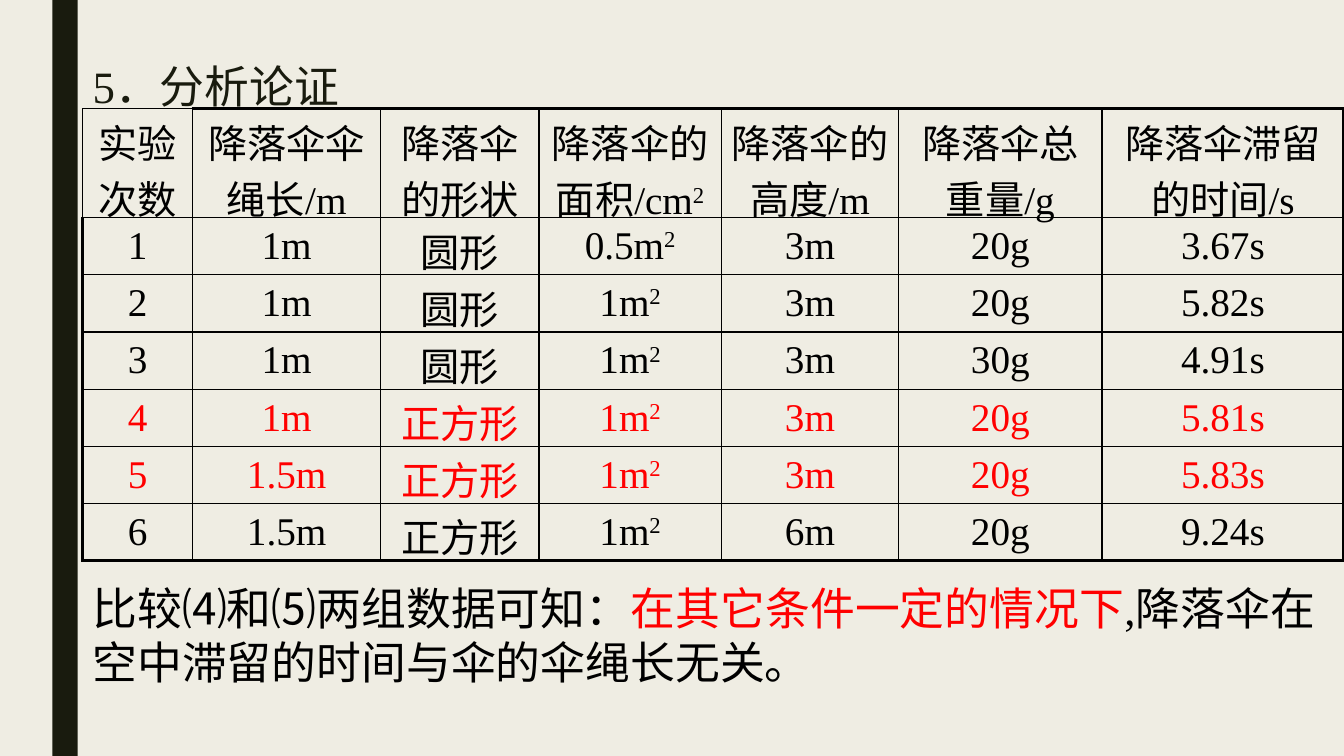
from dataclasses import dataclass

from lxml import etree
from pptx import Presentation
from pptx.dml.color import RGBColor
from pptx.enum.lang import MSO_LANGUAGE_ID
from pptx.enum.shapes import MSO_SHAPE
from pptx.enum.text import MSO_ANCHOR, MSO_AUTO_SIZE, PP_ALIGN
from pptx.oxml.ns import qn
from pptx.util import Inches, Pt

RECTANGLE = MSO_SHAPE.RECTANGLE
TOP, MIDDLE = MSO_ANCHOR.TOP, MSO_ANCHOR.MIDDLE
LEFT, CENTER = PP_ALIGN.LEFT, PP_ALIGN.CENTER
NO_AUTOFIT = MSO_AUTO_SIZE.NONE
CHINESE = MSO_LANGUAGE_ID.SIMPLIFIED_CHINESE


@dataclass(frozen=True)
class Theme:
    background: str = "EFEDE3"
    dark: str = "191B0E"
    text: str = "000000"
    highlight: str = "FF0000"
    font: str = "Times New Roman"
    large: int = 32
    table: int = 28
    thin: float = 1
    thick: float = 2.25


THEME = Theme()
SLIDE_WIDTH, SLIDE_HEIGHT = Inches(13.33), Inches(7.5)
CONTENT_LEFT = 6.15
CONTENT_WIDTH = 100 - CONTENT_LEFT
HEADER_HEIGHT, ROW_HEIGHT = 14.4, 7.56
COLUMN_WEIGHTS = (1.09, 1.87, 1.57, 1.81, 1.76, 2.02, 2.4)

EXPERIMENTS = (
    ("实验次数", "降落伞伞绳长/m", "降落伞的形状", "降落伞的面积/cm²",
     "降落伞的高度/m", "降落伞总重量/g", "降落伞滞留的时间/s"),
    ("1", "1m", "圆形", "0.5m²", "3m", "20g", "3.67s"),
    ("2", "1m", "圆形", "1m²", "3m", "20g", "5.82s"),
    ("3", "1m", "圆形", "1m²", "3m", "30g", "4.91s"),
    ("4", "1m", "正方形", "1m²", "3m", "20g", "5.81s"),
    ("5", "1.5m", "正方形", "1m²", "3m", "20g", "5.83s"),
    ("6", "1.5m", "正方形", "1m²", "6m", "20g", "9.24s"),
)
COMPARED_ROWS = (4, 5)


def across(percent):
    return round(SLIDE_WIDTH * percent / 100)


def down(percent):
    return round(SLIDE_HEIGHT * percent / 100)


def area(left, top, width, height):
    return across(left), down(top), across(width), down(height)


def add_text(paragraph, text, *, size=THEME.large, color=THEME.text,
             align=LEFT, superscript=False):
    paragraph.alignment = align
    run = paragraph.add_run()
    run.text = text
    font = run.font
    font.name, font.size = THEME.font, Pt(size)
    font.color.rgb = RGBColor.from_string(color)
    font.language_id = CHINESE
    if superscript:
        run._r.get_or_add_rPr().set("baseline", "30000")


def add_bar(slide):
    bar = slide.shapes.add_shape(RECTANGLE, *area(3.9, 0, 1.88, 100))
    bar.shadow.inherit = False
    bar.fill.solid()
    bar.fill.fore_color.rgb = RGBColor.from_string(THEME.dark)
    bar.line.fill.background()


def format_title(slide, text):
    title = slide.shapes.title
    title.left, title.top, title.width, title.height = area(
        CONTENT_LEFT, 0, 21.6, HEADER_HEIGHT)
    frame = title.text_frame
    frame.auto_size = NO_AUTOFIT
    frame.vertical_anchor = TOP
    frame.paragraphs[0].line_spacing = 2.0
    add_text(frame.paragraphs[0], text, color=THEME.dark)


def set_border(cell, side, width):
    border = etree.SubElement(cell._tc.get_or_add_tcPr(), qn(f"a:{side}"),
                              w=str(Pt(width)))
    fill = etree.SubElement(border, qn("a:solidFill"))
    etree.SubElement(fill, qn("a:srgbClr"), val=THEME.text)


def format_cell(cell, text, color, outer_sides):
    cell.vertical_anchor = MIDDLE
    cell.margin_left = cell.margin_right = Inches(0.1)
    cell.margin_top = cell.margin_bottom = Inches(0.04)
    for side in ("lnL", "lnR", "lnT", "lnB"):
        set_border(cell, side, THEME.thick if side in outer_sides else THEME.thin)
    cell.fill.background()
    style = {"size": THEME.table, "color": color, "align": CENTER}
    paragraph = cell.text_frame.paragraphs[0]
    add_text(paragraph, text.removesuffix("²"), **style)
    if text.endswith("²"):
        add_text(paragraph, "2", superscript=True, **style)


def add_experiment_table(slide):
    last_row, last_column = len(EXPERIMENTS) - 1, len(COLUMN_WEIGHTS) - 1
    table = slide.shapes.add_table(
        last_row + 1, last_column + 1,
        *area(CONTENT_LEFT, HEADER_HEIGHT, CONTENT_WIDTH,
              HEADER_HEIGHT + last_row * ROW_HEIGHT)).table
    table.first_row = table.horz_banding = False
    for column, weight in zip(table.columns, COLUMN_WEIGHTS):
        column.width = across(CONTENT_WIDTH * weight / sum(COLUMN_WEIGHTS))
    for row_index, values in enumerate(EXPERIMENTS):
        table.rows[row_index].height = down(ROW_HEIGHT if row_index else HEADER_HEIGHT)
        color = THEME.highlight if row_index in COMPARED_ROWS else THEME.text
        for column_index, text in enumerate(values):
            edges = {
                "lnL": column_index == 0 and row_index > 0,
                "lnR": column_index == last_column,
                "lnT": row_index == 0 and column_index > 0,
                "lnB": row_index == last_row,
            }
            outer_sides = [side for side, outer in edges.items() if outer]
            format_cell(table.cell(row_index, column_index), text, color, outer_sides)


def add_conclusion(slide):
    box = slide.shapes.add_textbox(*area(CONTENT_LEFT, 76.13, CONTENT_WIDTH, 15.73))
    box.text_frame.word_wrap = True
    paragraph = box.text_frame.paragraphs[0]
    add_text(paragraph, "比较⑷和⑸两组数据可知：")
    add_text(paragraph, "在其它条件一定的情况下", color=THEME.highlight)
    add_text(paragraph, ",降落伞在空中滞留的时间与伞的伞绳长无关。")


def main():
    presentation = Presentation()
    presentation.slide_width, presentation.slide_height = SLIDE_WIDTH, SLIDE_HEIGHT
    slide = presentation.slides.add_slide(presentation.slide_layouts.get_by_name("Title Only"))
    slide.background.fill.solid()
    slide.background.fill.fore_color.rgb = RGBColor.from_string(THEME.background)
    add_bar(slide)
    format_title(slide, "5．分析论证")
    add_conclusion(slide)
    add_experiment_table(slide)
    presentation.save("out.pptx")


if __name__ == "__main__":
    main()
